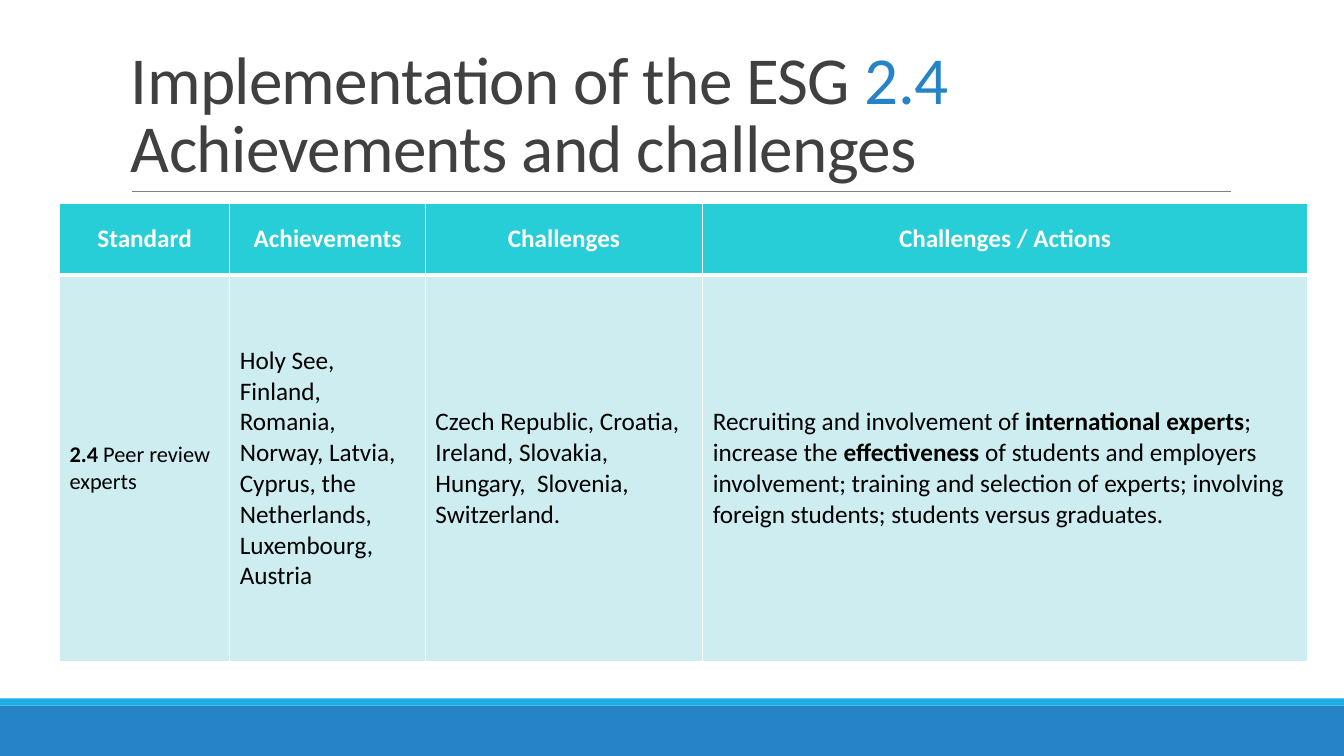
from lxml.etree import SubElement
from pptx import Presentation
from pptx.dml.color import RGBColor
from pptx.enum.shapes import MSO_CONNECTOR, MSO_SHAPE
from pptx.enum.text import MSO_ANCHOR, PP_ALIGN
from pptx.oxml.ns import qn
from pptx.util import Cm, Pt

WHITE = RGBColor(0xFF, 0xFF, 0xFF)
BLACK = RGBColor(0, 0, 0)
DARK = RGBColor(0x40, 0x40, 0x40)
GREY = RGBColor(0x80, 0x80, 0x80)
BLUE = RGBColor(0x26, 0x83, 0xC6)
SKY = RGBColor(0x1C, 0xAD, 0xE4)
TEAL = RGBColor(0x27, 0xCE, 0xD7)
PALE = RGBColor(0xCD, 0xED, 0xF0)

TITLE = [
    ("Implementation of the ESG ", DARK),
    ("2.4 ", BLUE),
    ("Achievements and challenges", DARK),
]
COLUMN_WIDTHS = [4.29, 4.93, 6.99, 15.24]
ROW_HEIGHTS = [1.8, 9.75]
HEADINGS = ["Standard", "Achievements", "Challenges", "Challenges / Actions"]
# Each body cell: text size, then (text, bold) spans
BODY = [
    (16, [("2.4 ", True), ("Peer review experts", False)]),
    (18, [("Holy See, Finland, Romania, Norway, Latvia, Cyprus, "
           "the Netherlands, Luxembourg, Austria", False)]),
    (18, [("Czech Republic, Croatia, Ireland, Slovakia, Hungary,  Slovenia, "
           "Switzerland.", False)]),
    (18, [("Recruiting and involvement of ", False),
          ("international experts", True),
          ("; increase the ", False),
          ("effectiveness", True),
          (" of students and employers involvement; training and selection of "
           "experts; involving foreign students; students versus graduates.", False)]),
]


class SlideBuilder:
    font_name = "Calibri"

    def __init__(self, page):
        self.page = page

    def band(self, top, height, color, width):
        box = self.page.shapes.add_shape(
            MSO_SHAPE.RECTANGLE, 0, Cm(top), width, Cm(height))
        box.shadow.inherit = False
        box.fill.solid()
        box.fill.fore_color.rgb = color
        box.line.fill.background()

    def rule(self, left, right, top):
        line = self.page.shapes.add_connector(
            MSO_CONNECTOR.STRAIGHT, Cm(left), Cm(top), Cm(right), Cm(top))
        line.line.color.rgb = GREY
        line.line.width = Pt(0.5)
        SubElement(line._element.spPr, qn("a:effectLst"))

    def span(self, para, text, size, color, bold=False):
        span = para.add_run()
        span.text = text
        span.font.name = self.font_name
        span.font.size = Pt(size)
        span.font.bold = bold
        span.font.color.rgb = color
        return span

    def title(self, left, top, width, height, spans):
        box = self.page.shapes.add_textbox(Cm(left), Cm(top), Cm(width), Cm(height))
        frame = box.text_frame
        frame.word_wrap = True
        frame.vertical_anchor = MSO_ANCHOR.BOTTOM
        para = frame.paragraphs[0]
        para.line_spacing = 0.85
        for text, color in spans:
            span = self.span(para, text, 48, color)
            span.font._element.set("spc", "-50")

    def borders(self, cell, top, bottom):
        """Draw white cell borders, with side borders of one point."""
        properties = cell._tc.get_or_add_tcPr()
        for side, width in (("L", 1), ("R", 1), ("T", top), ("B", bottom)):
            line = SubElement(properties, qn(f"a:ln{side}"), w=str(Pt(width)))
            fill = SubElement(line, qn("a:solidFill"))
            SubElement(fill, qn("a:srgbClr"), val=str(WHITE))

    def cell(self, cell, spans, size, color, fill, align, top, bottom):
        self.borders(cell, top, bottom)
        cell.fill.solid()
        cell.fill.fore_color.rgb = fill
        cell.vertical_anchor = MSO_ANCHOR.MIDDLE
        para = cell.text_frame.paragraphs[0]
        para.alignment = align
        for text, bold in spans:
            self.span(para, text, size, color, bold)

    def table(self, left, top):
        table = self.page.shapes.add_table(
            len(ROW_HEIGHTS), len(COLUMN_WIDTHS), Cm(left), Cm(top),
            Cm(sum(COLUMN_WIDTHS)), Cm(sum(ROW_HEIGHTS))).table
        table.horz_banding = False
        for row, height in zip(table.rows, ROW_HEIGHTS):
            row.height = Cm(height)
        for index, width in enumerate(COLUMN_WIDTHS):
            table.columns[index].width = Cm(width)
            self.cell(table.cell(0, index), [(HEADINGS[index], True)], 18,
                      WHITE, TEAL, PP_ALIGN.CENTER, top=1, bottom=3)
            size, spans = BODY[index]
            self.cell(table.cell(1, index), spans, size,
                      BLACK, PALE, PP_ALIGN.LEFT, top=3, bottom=1)


def main():
    deck = Presentation()
    deck.slide_width = Cm(33.87)
    deck.slide_height = Cm(19.05)
    builder = SlideBuilder(deck.slides.add_slide(deck.slide_layouts[6]))
    builder.band(17.78, 1.27, BLUE, deck.slide_width)
    builder.band(17.6, 0.18, SKY, deck.slide_width)
    builder.rule(3.33, 31.01, 4.83)
    builder.title(3.05, 0.79, 27.94, 4.04, TITLE)
    builder.table(1.5, 5.13)
    deck.save("out.pptx")


if __name__ == "__main__":
    main()
